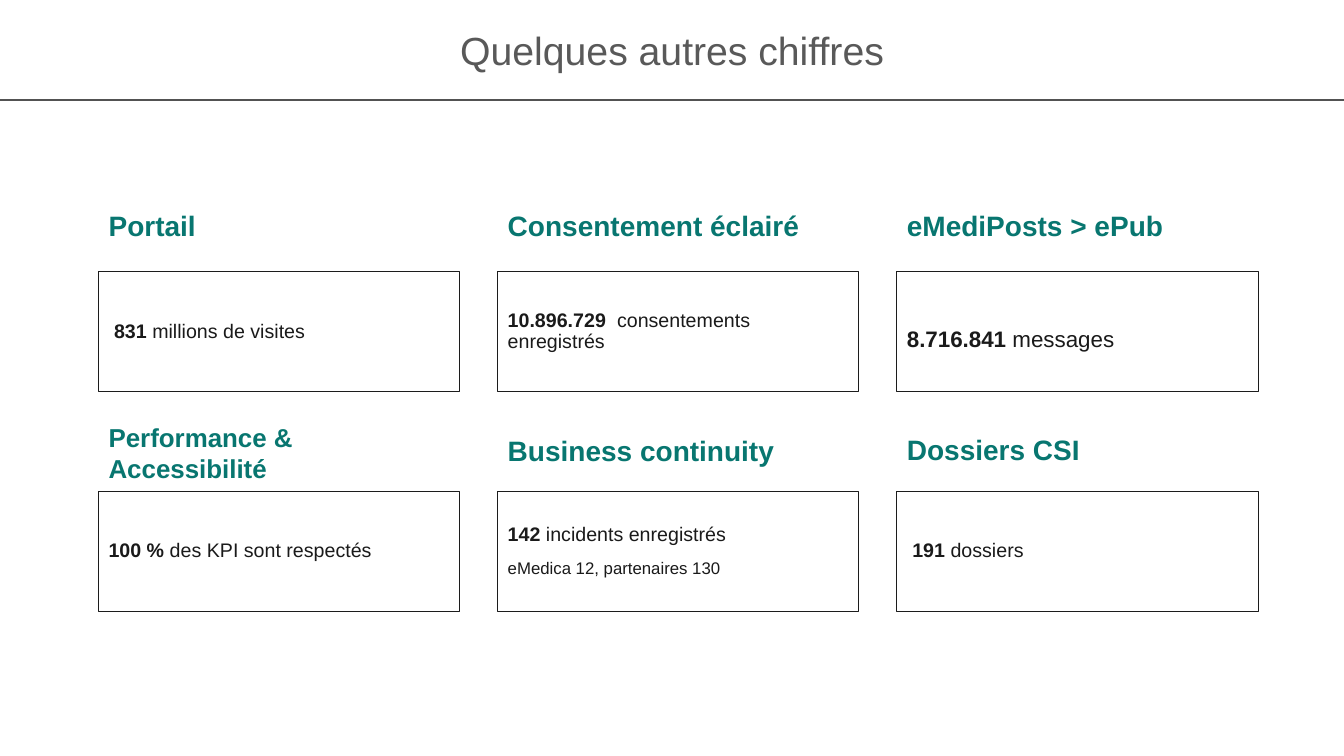
import pptx
import pptx.dml.color
import pptx.enum.shapes
import pptx.enum.text
import pptx.oxml.ns
import pptx.util
from lxml import etree

Pt = pptx.util.Pt
Anchor = pptx.enum.text.MSO_ANCHOR
Align = pptx.enum.text.PP_ALIGN
Kind = pptx.enum.shapes

WIDE, HIGH = 960, 540
LEFT, PITCH, WIDTH = 70.5, 285.1, 258
HEAD, BOX = 48, 86

COLORS = {"title": "595959", "head": "087670", "text": "1A1A1A",
          "rule": "525252", "edge": "1C1C1C"}

# Column, top, anchor, size, wording
HEADS = [
    (0, 137, Anchor.MIDDLE, 20, "Portail"),
    (1, 145.5, Anchor.TOP, 20, "Consentement éclairé"),
    (2, 137, Anchor.MIDDLE, 20, "eMediPosts > ePub"),
    (0, 297.5, Anchor.TOP, 18.5, "Performance & Accessibilité"),
    (1, 297.5, Anchor.MIDDLE, 20, "Business continuity"),
    (2, 297, Anchor.MIDDLE, 20, "Dossiers CSI"),
]

# Each paragraph: bold part, plain part, size, line spacing
FACTS = [
    [[(" 831 ", "millions de visites", 14, 0.9)],
     [("10.896.729  ", "consentements enregistrés", 14, 0.9)],
     [("8.716.841 ", "messages", 16, 1.5)]],
    [[("100 %", " des KPI sont respectés", 14, 0.9)],
     [("142 ", "incidents enregistrés", 14, 0.9),
      ("", "eMedica 12, partenaires 130", 12, 0.9)],
     [(" 191", " dossiers", 14, 0.9)]],
]


class Deck:
    def __init__(self):
        self.show = pptx.Presentation()
        self.show.slide_width, self.show.slide_height = Pt(WIDE), Pt(HIGH)
        self.slide = self.show.slides.add_slide(self.show.slide_layouts[6])
        self.face = "Arial"

    def color(self, name):
        return pptx.dml.color.RGBColor.from_string(COLORS[name])

    def font(self, font, size, name, bold=None):
        font.name, font.size, font.bold = self.face, Pt(size), bold
        font.color.rgb = self.color(name)

    def rule(self, top):
        line = self.slide.shapes.add_connector(
            Kind.MSO_CONNECTOR.STRAIGHT, Pt(0), Pt(top), Pt(WIDE), Pt(top))
        line.line.color.rgb = self.color("rule")
        line.line.width = Pt(1.5)
        etree.SubElement(line._element.spPr, pptx.oxml.ns.qn("a:effectLst"))

    def label(self, area, text, size, name, anchor, align=Align.LEFT, bold=False):
        box = self.slide.shapes.add_textbox(*map(Pt, area))
        frame = box.text_frame
        frame.word_wrap = True
        frame.vertical_anchor = anchor
        para = frame.paragraphs[0]
        para.text, para.alignment = text, align
        self.font(para.font, size, name, bold)

    def card(self, left, top, lines):
        """Draw an outlined box holding figures in bold and their wording."""
        box = self.slide.shapes.add_shape(
            Kind.MSO_SHAPE.RECTANGLE, Pt(left), Pt(top), Pt(WIDTH), Pt(BOX))
        box.shadow.inherit = False
        box.fill.background()
        box.line.color.rgb = self.color("edge")
        box.line.width = Pt(0.75)
        frame = box.text_frame
        frame.word_wrap = True
        frame.vertical_anchor = Anchor.MIDDLE
        for n, (count, words, size, space) in enumerate(lines):
            para = frame.add_paragraph() if n else frame.paragraphs[0]
            para.alignment = Align.LEFT
            para.line_spacing = space
            para.space_before = Pt(10 if n else 0)
            self.font(para.font, size, "text")
            for text, bold in ((count, True), (words, False)):
                if text:
                    run = para.add_run()
                    run.text, run.font.bold = text, bold


def main():
    deck = Deck()
    deck.rule(71.5)
    deck.label((0, 0, WIDE, 71.5), "Quelques autres chiffres", 28, "title",
               Anchor.MIDDLE, Align.CENTER)
    for col, top, anchor, size, text in HEADS:
        deck.label((LEFT + col * PITCH, top, WIDTH, HEAD), text, size, "head",
                   anchor, bold=True)
    for row, facts in enumerate(FACTS):
        for col, lines in enumerate(facts):
            deck.card(LEFT + col * PITCH, 194 + row * 157, lines)
    deck.show.save("out.pptx")


if __name__ == "__main__":
    main()
